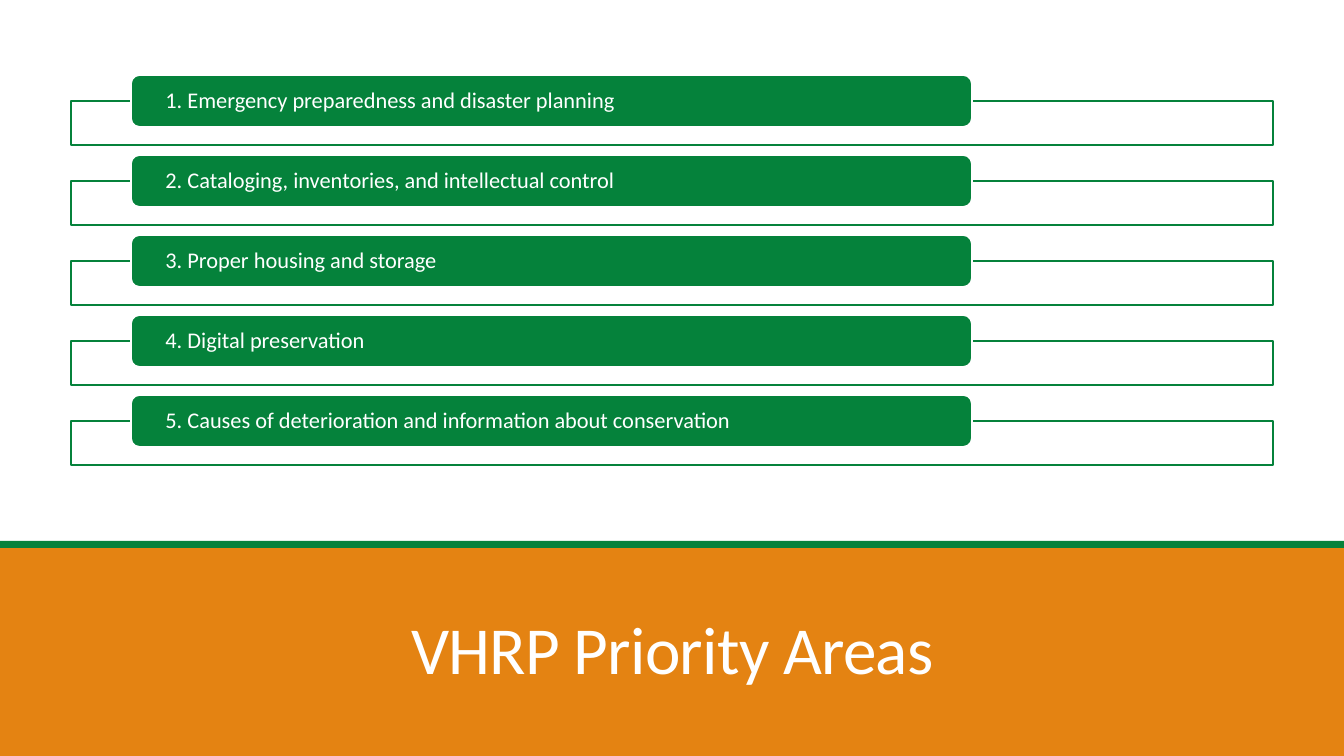
from pptx import Presentation
from pptx.dml.color import RGBColor as RGB
from pptx.enum.shapes import MSO_SHAPE as SHAPE
from pptx.enum.text import MSO_ANCHOR as ANCHOR, MSO_AUTO_SIZE as FIT, PP_ALIGN as ALIGN
from pptx.util import Emu, Pt

COLORS = {"orange": "E48312", "green": "05823B", "white": "FFFFFF"}
FONT = "Calibri"
AREAS = [
    "1. Emergency preparedness and disaster planning",
    "2. Cataloging, inventories, and intellectual control",
    "3. Proper housing and storage",
    "4. Digital preservation",
    "5. Causes of deterioration and information about conservation",
]
ROW_TOP = 75
ROW_STEP = 80


def px(n):
    return Emu(round(n * 9144000 / 1008))


def color(name):
    return RGB.from_string(COLORS[name])


def add_box(slide, kind, box, fill, line=None):
    sp = slide.shapes.add_shape(kind, *map(px, box))
    sp.shadow.inherit = False
    sp.fill.solid()
    sp.fill.fore_color.rgb = color(fill)
    if line:
        sp.line.color.rgb = color(line)
        sp.line.width = Pt(1.25)
    else:
        sp.line.fill.background()
    return sp


def write(sp, text, size, align, spacing, anchor):
    tf = sp.text_frame
    tf.word_wrap = True
    tf.auto_size = FIT.NONE
    tf.vertical_anchor = anchor
    p = tf.paragraphs[0]
    p.alignment = align
    p.line_spacing = spacing
    r = p.add_run()
    r.text = text
    r.font.name = FONT
    r.font.size = Pt(size)
    r.font.color.rgb = color("white")
    return r


def add_area(slide, top, text):
    add_box(slide, SHAPE.RECTANGLE, (71, top + 26, 1202, 44), "white", "green")
    pill = add_box(slide, SHAPE.ROUNDED_RECTANGLE, (131, top, 841, 52), "green", "white")
    write(pill, text, 16, ALIGN.LEFT, 0.9, ANCHOR.MIDDLE)
    tf = pill.text_frame
    tf.margin_left = tf.margin_right = px(32)
    tf.margin_top = tf.margin_bottom = 0


def place_title(slide, text):
    title = slide.shapes.title
    title.left, title.top, title.width, title.height = map(px, (118, 579, 1109, 114))
    r = write(title, text, 48, ALIGN.CENTER, 0.85, ANCHOR.BOTTOM)
    r._r.get_or_add_rPr().set("spc", "-50")
    slide.shapes.element.append(title.element)


def main():
    prs = Presentation()
    prs.slide_width, prs.slide_height = px(1344), px(756)
    slide = prs.slides.add_slide(prs.slide_layouts[5])
    add_box(slide, SHAPE.RECTANGLE, (0, 546, 1344, 210), "orange")
    add_box(slide, SHAPE.RECTANGLE, (0, 541, 1344, 7), "green")
    place_title(slide, "VHRP Priority Areas")
    for i, text in enumerate(AREAS):
        add_area(slide, ROW_TOP + i * ROW_STEP, text)
    prs.save("out.pptx")


if __name__ == "__main__":
    main()
